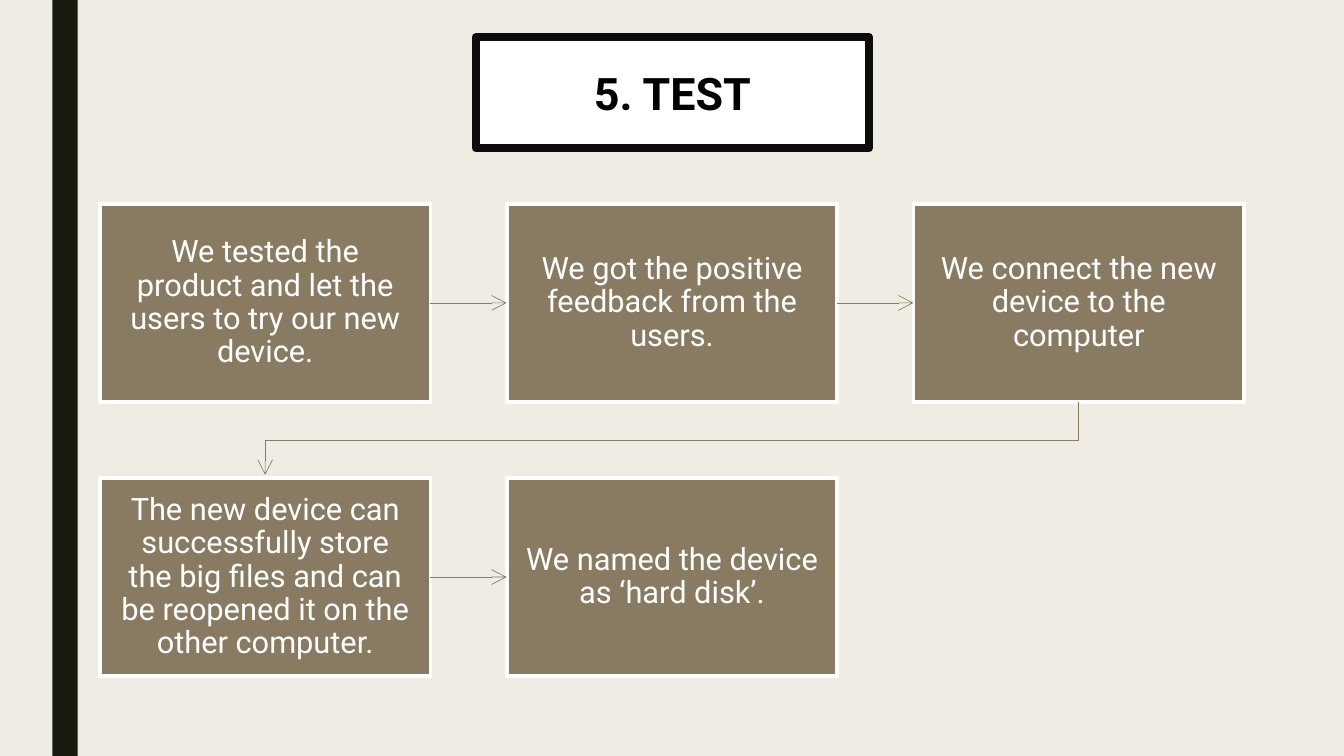
from dataclasses import dataclass

from lxml.etree import SubElement
from pptx import Presentation
from pptx.dml.color import RGBColor
from pptx.enum.shapes import MSO_CONNECTOR, MSO_SHAPE
from pptx.enum.text import MSO_ANCHOR, PP_ALIGN
from pptx.oxml.ns import qn
from pptx.util import Inches, Pt


@dataclass(frozen=True)
class Theme:
    font: str = "Roboto"
    background: str = "EFEDE3"
    bar: str = "191B0E"
    frame: str = "0D0D0D"
    title_text: str = "000000"
    white: str = "FFFFFF"
    brown: str = "897B61"
    title_size: int = 32
    step_size: int = 22
    frame_width: float = 6
    step_border: float = 2.75
    arrow_width: float = 0.5


THEME = Theme()

# Step grid: three columns, filled row by row
COLUMNS = 3
GRID_LEFT, GRID_TOP = 0.99, 2.02
STEP_WIDTH, STEP_HEIGHT = 3.28, 1.97
COLUMN_PITCH, ROW_PITCH = 4.035, 2.72
ARROW_GAP = 0.03

STEPS = [
    "We tested the product and let the users to try our new device.",
    "We got the positive feedback from the users.",
    "We connect the new device to the computer",
    "The new device can successfully store the big files and can be reopened it on the other computer.",
    "We named the device as ‘hard disk’.",
]


def rgb(value):
    return RGBColor.from_string(value)


def apply_format(target, values):
    for name, value in values.items():
        setattr(target, name, value)


def add_block(slide, left, top, width, height, fill, border=None, border_width=0):
    block = slide.shapes.add_shape(
        MSO_SHAPE.RECTANGLE, Inches(left), Inches(top), Inches(width), Inches(height))
    block.shadow.inherit = False
    block.fill.solid()
    block.fill.fore_color.rgb = rgb(fill)
    if border:
        block.line.color.rgb = rgb(border)
        block.line.width = Pt(border_width)
    else:
        block.line.fill.background()
    return block


def write_text(block, text, size, color, inset=0.1, bold=False, spacing=1.0):
    frame = block.text_frame
    margins = ("margin_left", "margin_right", "margin_top", "margin_bottom")
    apply_format(frame, {
        "word_wrap": True,
        "vertical_anchor": MSO_ANCHOR.MIDDLE,
        **{margin: Inches(inset) for margin in margins},
    })
    paragraph = frame.paragraphs[0]
    apply_format(paragraph, {"alignment": PP_ALIGN.CENTER, "line_spacing": spacing})
    run = paragraph.add_run()
    run.text = text
    apply_format(run.font, {"name": THEME.font, "size": Pt(size), "bold": bold})
    run.font.color.rgb = rgb(color)


def add_title(slide, text):
    title = add_block(slide, 4.72, 0.37, 3.9, 1.1, THEME.white, THEME.frame, THEME.frame_width)
    SubElement(title.element.spPr.find(qn("a:ln")), qn("a:round"))
    write_text(title, text, THEME.title_size, THEME.title_text, bold=True)


def add_step(slide, index, text):
    row, column = divmod(index, COLUMNS)
    step = add_block(
        slide, GRID_LEFT + column * COLUMN_PITCH, GRID_TOP + row * ROW_PITCH,
        STEP_WIDTH, STEP_HEIGHT, THEME.brown, THEME.white, THEME.step_border)
    write_text(step, text, THEME.step_size, THEME.white, inset=0.17, spacing=0.9)
    return step


def style_arrow(arrow):
    arrow.line.color.rgb = rgb(THEME.brown)
    arrow.line.width = Pt(THEME.arrow_width)
    properties = arrow.element.spPr
    SubElement(properties.find(qn("a:ln")), qn("a:tailEnd"), type="arrow", w="lg", len="lg")
    if properties.find(qn("a:effectLst")) is None:
        SubElement(properties, qn("a:effectLst"))


def add_row_arrow(slide, source, target):
    arrow = slide.shapes.add_connector(MSO_CONNECTOR.STRAIGHT, 0, 0, 0, 0)
    arrow.begin_connect(source, 3)
    arrow.end_connect(target, 1)
    style_arrow(arrow)


def add_wrap_arrow(slide, source, target):
    start_x = source.left + source.width // 2
    end_x = target.left + target.width // 2
    start_y = source.top + source.height
    end_y = target.top - Inches(ARROW_GAP)
    turn_y = (start_y + target.top) // 2
    builder = slide.shapes.build_freeform(start_x, start_y)
    builder.add_line_segments(
        [(start_x, turn_y), (end_x, turn_y), (end_x, end_y)], close=False)
    arrow = builder.convert_to_shape()
    arrow.fill.background()
    arrow.shadow.inherit = False
    style_arrow(arrow)


def main():
    presentation = Presentation()
    apply_format(presentation, {"slide_width": Inches(13.33), "slide_height": Inches(7.5)})
    slide = presentation.slides.add_slide(presentation.slide_layouts[6])

    # Background and side bar
    slide.background.fill.solid()
    slide.background.fill.fore_color.rgb = rgb(THEME.background)
    add_block(slide, 0.52, 0, 0.25, 7.5, THEME.bar)

    # Title
    add_title(slide, "5. TEST")

    # Steps and the arrows between them
    steps = [add_step(slide, index, text) for index, text in enumerate(STEPS)]
    for index, (source, target) in enumerate(zip(steps, steps[1:]), start=1):
        connect = add_row_arrow if index % COLUMNS else add_wrap_arrow
        connect(slide, source, target)

    presentation.save("out.pptx")


if __name__ == "__main__":
    main()
